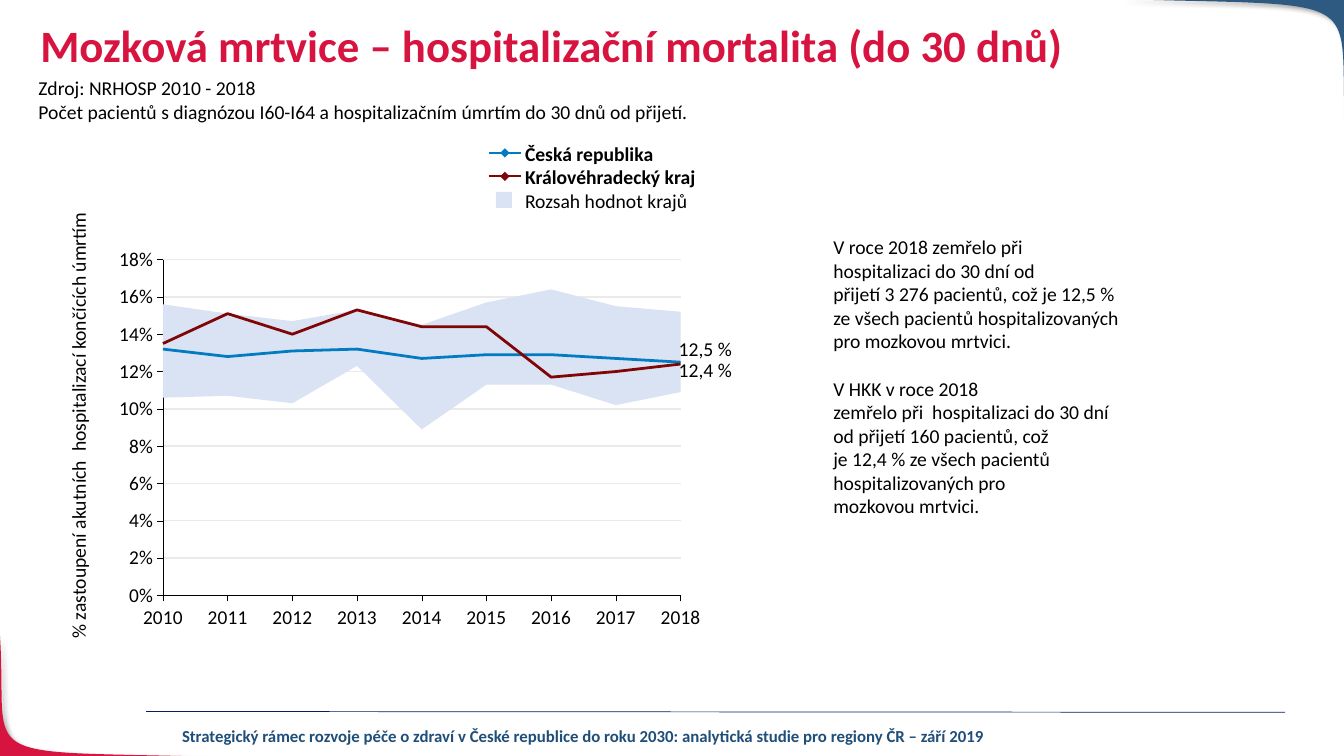
from lxml import etree
from pptx import Presentation
from pptx import util as u
from pptx.chart import data as chart_data
from pptx.dml.color import RGBColor
from pptx.enum import chart as charts, shapes, text
from pptx.oxml import parse_xml
from pptx.oxml.ns import nsdecls, qn

COLORS = {
    "red": "D71440", "blue": "2E5980", "footer": "1F4E79", "rule": "002060",
    "country": "037BC1", "region": "7F0506", "range": "DAE3F3",
    "grid": "EAEAEA", "black": "000000",
}
COLUMNS, ROWS = 160, 90
YEARS = [str(year) for year in range(2010, 2019)]
LOWEST = [0.106, 0.107, 0.103, 0.123, 0.089, 0.113, 0.113, 0.102, 0.109]
SPREAD = [0.05, 0.044, 0.044, 0.03, 0.056, 0.044, 0.051, 0.053, 0.043]
COUNTRY = [0.132, 0.128, 0.131, 0.132, 0.127, 0.129, 0.129, 0.127, 0.125]
REGION = [0.135, 0.151, 0.14, 0.153, 0.144, 0.144, 0.117, 0.12, 0.124]


class SlideBuilder:
    """Holds the slide, its grid and the text style."""

    def __init__(self, presentation, font="Calibri", size=14):
        self.slide = presentation.slides.add_slide(presentation.slide_layouts[1])
        self.cell_width = presentation.slide_width / COLUMNS
        self.cell_height = presentation.slide_height / ROWS
        self.font, self.size = font, size

    def x(self, columns):
        return u.Emu(round(columns * self.cell_width))

    def y(self, rows):
        return u.Emu(round(rows * self.cell_height))

    def box(self, left, top, width, height):
        return self.x(left), self.y(top), self.x(width), self.y(height)

    def color(self, name):
        return RGBColor.from_string(COLORS[name])

    def style_font(self, font, size=None, color="black", bold=False):
        font.name, font.size, font.bold = self.font, u.Pt(size or self.size), bold
        font.color.rgb = self.color(color)

    def style_line(self, line, color, width):
        line.color.rgb = self.color(color)
        line.width = u.Pt(width)

    def fill_text(self, shape, lines, align=text.PP_ALIGN.LEFT, wrap=False, **style):
        frame = shape.text_frame
        frame.text = "\n".join(lines)
        frame.word_wrap = wrap
        frame.auto_size = text.MSO_AUTO_SIZE.NONE
        for paragraph in frame.paragraphs:
            paragraph.alignment = align
            for run in paragraph.runs:
                self.style_font(run.font, **style)
        return frame

    def text(self, box, lines, rotation=0, **style):
        shape = self.slide.shapes.add_textbox(*self.box(*box))
        shape.rotation = rotation
        return self.fill_text(shape, lines, **style)

    def label(self, box, line, **style):
        frame = self.text(box, [line], wrap=True, **style)
        frame.vertical_anchor = text.MSO_ANCHOR.MIDDLE
        frame.margin_left = frame.margin_right = 0
        frame.margin_top = frame.margin_bottom = 0

    def title(self, box, line, **style):
        shape = self.slide.shapes.title
        shape.left, shape.top, shape.width, shape.height = self.box(*box)
        frame = self.fill_text(shape, [line], wrap=True, **style)
        frame.vertical_anchor = text.MSO_ANCHOR.TOP
        frame.paragraphs[0].line_spacing = 0.9

    def body(self, box, blocks, gap):
        shape = self.slide.placeholders[1]
        shape.left, shape.top, shape.width, shape.height = self.box(*box)
        frame = self.fill_text(shape, [line for block in blocks for line in block])
        for paragraph in frame.paragraphs:
            properties = paragraph._p.get_or_add_pPr()
            properties.set("marL", "0")
            properties.set("indent", "0")
            etree.SubElement(properties, qn("a:buNone"))
            paragraph.space_before = u.Pt(0)
        start = 0
        for block in blocks[:-1]:
            start += len(block)
            frame.paragraphs[start].space_before = u.Pt(gap)

    def line(self, start, end, color, width):
        connector = self.slide.shapes.add_connector(
            shapes.MSO_CONNECTOR.STRAIGHT, self.x(start[0]), self.y(start[1]),
            self.x(end[0]), self.y(end[1]))
        self.style_line(connector.line, color, width)
        etree.SubElement(connector._element.spPr, qn("a:effectLst"))

    def marker(self, kind, center, size, color):
        left, top = center[0] - size / 2, center[1] - size / 2
        shape = self.slide.shapes.add_shape(kind, *self.box(left, top, size, size))
        shape.shadow.inherit = False
        shape.fill.solid()
        shape.fill.fore_color.rgb = self.color(color)
        shape.line.fill.background()

    def corner(self, curve, corner, color, steps=40):
        """Fills the area between a cubic curve and a slide corner."""
        points = []
        for step in range(steps + 1):
            t = step / steps
            weights = ((1 - t) ** 3, 3 * t * (1 - t) ** 2, 3 * t * t * (1 - t), t ** 3)
            column, row = (sum(w * p[axis] for w, p in zip(weights, curve))
                           for axis in (0, 1))
            points.append((self.x(column), self.y(row)))
        points.append((self.x(corner[0]), self.y(corner[1])))
        builder = self.slide.shapes.build_freeform(*points[0])
        builder.add_line_segments(points[1:], close=True)
        shape = builder.convert_to_shape()
        shape.fill.solid()
        shape.fill.fore_color.rgb = self.color(color)
        shape.line.fill.background()
        shape._element.spPr.append(parse_xml(
            f'<a:effectLst {nsdecls("a")}><a:outerShdw blurRad="50800" dist="38100" '
            'dir="2700000" rotWithShape="0"><a:srgbClr val="000000">'
            '<a:alpha val="40000"/></a:srgbClr></a:outerShdw></a:effectLst>'))

    def range_chart(self, box, categories, areas, lines):
        """Stacked areas with lines on the same axes; each item: name, values, color."""
        data = chart_data.CategoryChartData(number_format="0%")
        data.categories = categories
        for name, values, _ in areas + lines:
            data.add_series(name, values)
        chart = self.slide.shapes.add_chart(
            charts.XL_CHART_TYPE.AREA_STACKED, *self.box(*box), data).chart
        chart.has_legend = chart.has_title = False
        self.style_font(chart.font)

        # Move the line series to a line plot
        plot_area = chart._chartSpace.chart.plotArea
        area_plot = plot_area.find(qn("c:areaChart"))
        line_plot = parse_xml(
            f'<c:lineChart {nsdecls("c")}><c:grouping val="standard"/>'
            '<c:varyColors val="0"/><c:marker val="1"/></c:lineChart>')
        for series in area_plot.findall(qn("c:ser"))[len(areas):]:
            line_plot.find(qn("c:marker")).addprevious(series)
        for axis in area_plot.findall(qn("c:axId")):
            etree.SubElement(line_plot, qn("c:axId")).set("val", axis.get("val"))
        area_plot.addnext(line_plot)

        # Series colours
        for plot in chart.plots:
            plot.vary_by_categories = False
        for series, (_, _, color) in zip(chart.plots[0].series, areas):
            if color:
                series.format.fill.solid()
                series.format.fill.fore_color.rgb = self.color(color)
            else:
                series.format.fill.background()
            series.format.line.fill.background()
        for series, (_, _, color) in zip(chart.plots[1].series, lines):
            self.style_line(series.format.line, color, 2)
            series.marker.style = charts.XL_MARKER_STYLE.NONE
            series.smooth = False

        # Axes and plot position
        for axis in (chart.category_axis, chart.value_axis):
            self.style_font(axis.tick_labels.font)
            self.style_line(axis.format.line, "black", 0.25)
            axis.major_tick_mark = charts.XL_TICK_MARK.OUTSIDE
            axis.minor_tick_mark = charts.XL_TICK_MARK.NONE
        chart.category_axis.has_major_gridlines = False
        values = chart.value_axis
        values.minimum_scale, values.maximum_scale, values.major_unit = 0, 0.18, 0.02
        values.tick_labels.number_format = "0%"
        values.tick_labels.number_format_is_linked = False
        values.has_major_gridlines = True
        self.style_line(values.major_gridlines.format.line, "grid", 1)
        values._element.find(qn("c:crossBetween")).set("val", "midCat")
        for layout in plot_area.findall(qn("c:layout")):
            plot_area.remove(layout)
        modes = '<c:layoutTarget val="inner"/><c:xMode val="edge"/><c:yMode val="edge"/>'
        shares = "".join(f'<c:{key} val="{share}"/>' for key, share in
                         zip("xywh", (0.1, 0.07, 0.88, 0.8)))
        plot_area.insert(0, parse_xml(
            f'<c:layout {nsdecls("c")}><c:manualLayout>{modes}{shares}'
            '</c:manualLayout></c:layout>'))


def main():
    presentation = Presentation()
    presentation.slide_width, presentation.slide_height = u.Inches(13.33), u.Inches(7.5)
    page = SlideBuilder(presentation)

    # Frame: corners and footer
    page.corner([(25.6, 90.1), (-4.1, 89.3), (1, 91.1), (0, 75.6)], (-0.1, 90.1), "red")
    page.corner([(133.3, -0.1), (164.4, 0.8), (159.1, -1.2), (160.2, 17)],
                (160.2, -0.1), "blue")
    page.line((17.4, 84.7), (153, 84.8), "rule", 0.5)
    page.text((20.2, 85.8, 98.5, 3.6),
              ["Strategický rámec rozvoje péče o zdraví v České republice do roku 2030: "
               "analytická studie pro regiony ČR – září 2019"],
              align=text.PP_ALIGN.CENTER, size=12, color="footer", bold=True)

    # Heading and commentary
    page.title((3.6, 2.2, 138, 8.3), "Mozková mrtvice – hospitalizační mortalita (do 30 dnů)",
               size=32, color="red", bold=True)
    page.text((3.4, 8.5, 80, 6.8), [
        "Zdroj: NRHOSP 2010 - 2018",
        "Počet pacientů s diagnózou I60-I64 a hospitalizačním úmrtím do 30 dnů od přijetí."])
    page.body((98, 27.4, 50.2, 44.8), [
        ["V roce 2018 zemřelo při", "hospitalizaci do 30 dní od",
         "přijetí 3 276 pacientů, což je 12,5 %", "ze všech pacientů hospitalizovaných",
         "pro mozkovou mrtvici."],
        ["V HKK v roce 2018", "zemřelo při  hospitalizaci do 30 dní",
         "od přijetí 160 pacientů, což", "je 12,4 % ze všech pacientů",
         "hospitalizovaných pro", "mozkovou mrtvici."]], gap=17)

    # Chart with its axis title
    page.range_chart(
        (12.4, 27.4, 71, 50), YEARS,
        areas=[("Minimum krajů", LOWEST, None), ("Rozsah hodnot krajů", SPREAD, "range")],
        lines=[("Česká republika", COUNTRY, "country"),
               ("Královéhradecký kraj", REGION, "region")])
    page.text((-17.4, 48.6, 53.5, 4.1),
              ["% zastoupení akutních  hospitalizací končících úmrtím"],
              rotation=270, align=text.PP_ALIGN.CENTER)
    for top, value in ((40.1, "12,5 %"), (42.6, "12,4 %")):
        page.label((80.8, top, 8.6, 2.9), value)

    # Legend
    legend = [("Česká republika", "country", True), ("Královéhradecký kraj", "region", True),
              ("Rozsah hodnot krajů", "range", False)]
    for index, (name, color, is_line) in enumerate(legend):
        middle = 18.2 + 2.8 * index
        if is_line:
            page.line((58.2, middle), (62, middle), color, 1.5)
            page.marker(shapes.MSO_SHAPE.DIAMOND, (60.1, middle), 1.1, color)
        else:
            page.marker(shapes.MSO_SHAPE.RECTANGLE, (60, middle), 1.9, color)
        page.label((62.5, middle - 1.4, 23.3, 2.9), name, bold=is_line)

    presentation.save("out.pptx")


if __name__ == "__main__":
    main()
